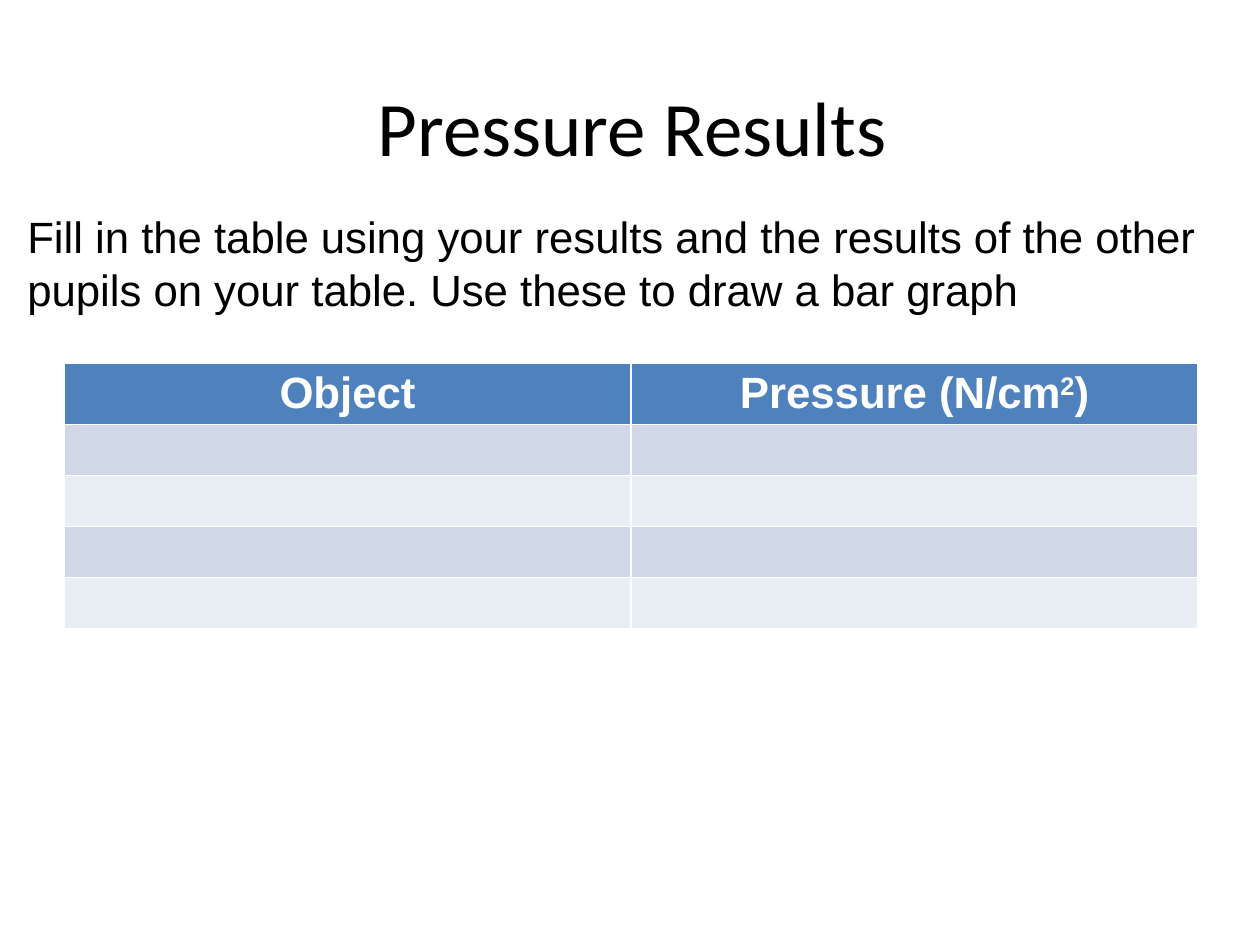
from typing import NamedTuple

from pptx import Presentation
from pptx import util as u
from pptx.dml.color import RGBColor
from pptx.enum import text

PX_PER_INCH = 126
BLACK, WHITE = "000000", "FFFFFF"
HEADER_FILL = "4F81BD"
BAND_FILLS = ("D0D8E8", "E9EDF4")


class Area(NamedTuple):
    left: int
    top: int
    width: int
    height: int


class Span(NamedTuple):
    words: str
    superscript: bool = False


class Style(NamedTuple):
    font: str
    size: int
    color: str
    bold: bool = False


TITLE_STYLE = Style("Calibri", 44, BLACK)
BODY_STYLE = Style("Arial", 25, BLACK)
HEADER_STYLE = Style("Arial", 25, WHITE, bold=True)

TITLE_AREA = Area(74, 47, 1134, 157)
INSTRUCTION_AREA = Area(15, 204, 1220, 118)
TABLE_AREA = Area(64, 363, 1134, 255)
RESULT_ROWS = 4

INSTRUCTIONS = (
    "Fill in the table using your results and the results of the other",
    "pupils on your table. Use these to draw a bar graph",
)
HEADERS = (
    (Span("Object"),),
    (Span("Pressure (N/cm"), Span("2", superscript=True), Span(")")),
)


def px(length: int) -> u.Emu:
    return u.Emu(round(length * u.Inches(1) / PX_PER_INCH))


def rgb(color: str) -> RGBColor:
    return RGBColor.from_string(color)


def add_spans(para, spans: tuple[Span, ...], style: Style) -> None:
    for span in spans:
        run = para.add_run()
        run.text = span.words
        run.font.name = style.font
        run.font.size = u.Pt(style.size)
        run.font.bold = style.bold
        run.font.color.rgb = rgb(style.color)
        if span.superscript:
            run.font._element.set("baseline", "30000")


def fill_title(page) -> None:
    title = page.shapes.title
    title.left, title.top, title.width, title.height = map(px, TITLE_AREA)
    title.text_frame.vertical_anchor = text.MSO_ANCHOR.MIDDLE
    para = title.text_frame.paragraphs[0]
    para.alignment = text.PP_ALIGN.CENTER
    add_spans(para, (Span("Pressure Results "),), TITLE_STYLE)


def add_instructions(page) -> None:
    box = page.shapes.add_textbox(*map(px, INSTRUCTION_AREA))
    frame = box.text_frame
    frame.word_wrap = False
    frame.auto_size = text.MSO_AUTO_SIZE.SHAPE_TO_FIT_TEXT
    for index, line in enumerate(INSTRUCTIONS):
        para = frame.add_paragraph() if index else frame.paragraphs[0]
        add_spans(para, (Span(line),), BODY_STYLE)


def add_results_table(page) -> None:
    """Add the header row and the empty banded rows; the table style gives the borders."""
    table = page.shapes.add_table(
        RESULT_ROWS + 1, len(HEADERS), *map(px, TABLE_AREA)
    ).table
    for cell, spans in zip(table.rows[0].cells, HEADERS):
        para = cell.text_frame.paragraphs[0]
        para.alignment = text.PP_ALIGN.CENTER
        add_spans(para, spans, HEADER_STYLE)
    for index, row in enumerate(table.rows):
        color = BAND_FILLS[(index - 1) % 2] if index else HEADER_FILL
        for cell in row.cells:
            cell.fill.solid()
            cell.fill.fore_color.rgb = rgb(color)


def main() -> None:
    deck = Presentation()
    deck.slide_width, deck.slide_height = px(1260), px(945)
    page = deck.slides.add_slide(deck.slide_layouts[5])
    fill_title(page)
    add_results_table(page)
    add_instructions(page)
    deck.save("out.pptx")


if __name__ == "__main__":
    main()
